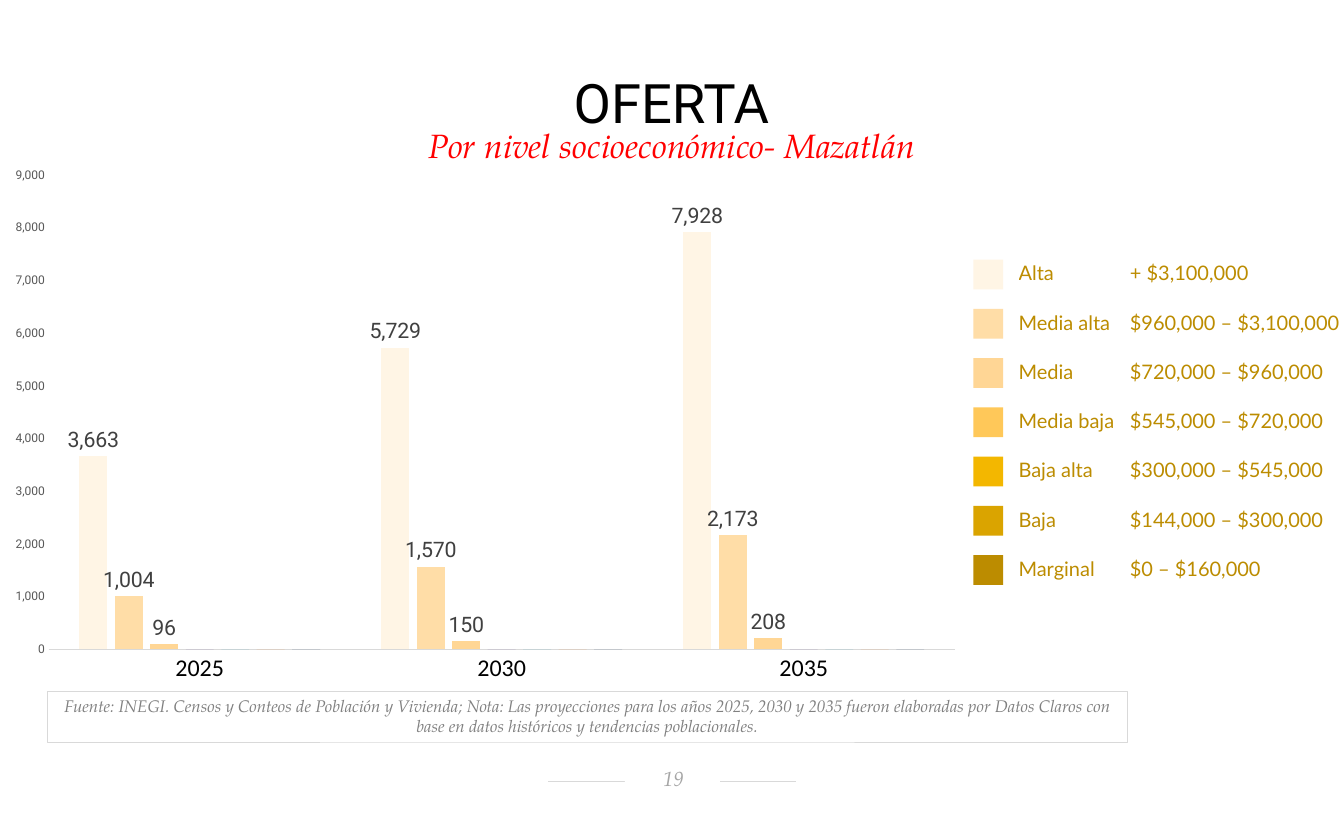
from dataclasses import dataclass

from lxml import etree
from pptx import Presentation
from pptx.chart.data import CategoryChartData
from pptx.dml.color import RGBColor
from pptx.enum.chart import XL_CHART_TYPE, XL_LABEL_POSITION, XL_TICK_MARK
from pptx.enum.shapes import MSO_CONNECTOR, MSO_SHAPE
from pptx.enum.text import MSO_ANCHOR, PP_ALIGN
from pptx.oxml import parse_xml
from pptx.oxml.ns import nsdecls, qn
from pptx.util import Inches, Pt

COLUMNS = XL_CHART_TYPE.COLUMN_CLUSTERED
LABEL_ABOVE = XL_LABEL_POSITION.OUTSIDE_END
NO_TICK = XL_TICK_MARK.NONE
STRAIGHT = MSO_CONNECTOR.STRAIGHT
RECTANGLE = MSO_SHAPE.RECTANGLE
MIDDLE, TOP = MSO_ANCHOR.MIDDLE, MSO_ANCHOR.TOP
CENTER, LEFT = PP_ALIGN.CENTER, PP_ALIGN.LEFT

CELL = Inches(0.5)
SERIF, SANS, LABEL, AXIS = "TeX Gyre Pagella", "Roboto", "Lato", "Calibri"
COLORS = {
    "white": "FFFFFF", "black": "000000", "accent": "FF0000", "rule": "D9D9D9",
    "number": "A6A6A6", "source": "808080", "legend": "BC8C00",
    "scale": "595959", "value": "404040",
}
LEVELS = [
    ("Alta", "+ $3,100,000", "FFF5E5"),
    ("Media alta", "$960,000 – $3,100,000", "FFDDA7"),
    ("Media", "$720,000 – $960,000", "FFD695"),
    ("Media baja", "$545,000 – $720,000", "FFC859"),
    ("Baja alta", "$300,000 – $545,000", "F3B700"),
    ("Baja", "$144,000 – $300,000", "DAA400"),
    ("Marginal", "$0 – $160,000", "BC8C00"),
]
YEARS = ["2025", "2030", "2035"]
SUPPLY = [
    ((3663, 5729, 7928), "FFF5E5"),
    ((1004, 1570, 2173), "FFDDA7"),
    ((96, 150, 208), "FFD695"),
    ((0, 0, 0), "8064A2"),
    ((0, 0, 0), "4BACC6"),
    ((0, 0, 0), "F79646"),
    ((0, 0, 0), "2C4D75"),
]
SOURCE = (
    "Fuente: INEGI. Censos y Conteos de Población y Vivienda; Nota: Las "
    "proyecciones para los años 2025, 2030 y 2035 fueron elaboradas por Datos "
    "Claros con base en datos históricos y tendencias poblacionales."
)


@dataclass
class Box:
    """A region measured in grid columns and rows."""
    column: float
    row: float
    columns: float
    rows: float

    def frame(self):
        """Return left, top, width and height as lengths."""
        cells = (self.column, self.row, self.columns, self.rows)
        return [round(cell * CELL) for cell in cells]

    def inner(self, column, row, columns, rows):
        """Return a box offset from this one's corner."""
        return Box(self.column + column, self.row + row, columns, rows)


def color(key):
    """Turn a colour name or hex string into a colour."""
    return RGBColor.from_string(COLORS.get(key, key))


def style_font(font, size, face, shade, italic=False):
    """Set the size, face, colour and slant of a font."""
    font.size, font.name, font.italic = Pt(size), face, italic
    font.color.rgb = color(shade)


def write(frame, text, size, face, shade, italic=False, align=CENTER, anchor=TOP):
    """Put one formatted paragraph in a text frame."""
    frame.text = text
    frame.word_wrap = True
    frame.vertical_anchor = anchor
    para = frame.paragraphs[0]
    para.alignment = align
    style_font(para.runs[0].font, size, face, shade, italic)
    return para


def add_rectangle(page, box, fill=None, line=None):
    """Add a flat rectangle with an optional fill and outline."""
    shape = page.shapes.add_shape(RECTANGLE, *box.frame())
    shape.shadow.inherit = False
    if fill:
        shape.fill.solid()
        shape.fill.fore_color.rgb = color(fill)
    else:
        shape.fill.background()
    if line:
        shape.line.color.rgb = color(line)
        shape.line.width = Pt(0.75)
    else:
        shape.line.fill.background()
    return shape


def add_footer(page, box):
    """Draw the page number over a thin rule."""
    left, top, width, height = box.frame()
    middle = top + round(height * 0.55)
    rule = page.shapes.add_connector(STRAIGHT, left, middle, left + width, middle)
    rule.line.color.rgb = color("rule")
    rule.line.width = Pt(0.75)
    etree.SubElement(rule.element.spPr, qn("a:effectLst"))
    plate = add_rectangle(page, box.inner(1.6, 0, 1.98, box.rows), "white")
    frame = plate.text_frame
    frame.margin_left, frame.margin_right = Inches(0.11), Inches(0.09)
    frame.margin_top, frame.margin_bottom = Inches(0.02), Inches(0.05)
    write(frame, "19", 15.4, SERIF, "number", True, anchor=MIDDLE)


def add_source(page, box):
    """Write the source note in an outlined box."""
    note = add_rectangle(page, box, line="rule")
    write(note.text_frame, SOURCE, 12.6, SERIF, "source", True)


def add_heading(page, box):
    """Write the title and the subtitle beneath it."""
    title = page.shapes.add_textbox(*box.inner(1.68, 0, 26.02, 1.2).frame())
    frame = title.text_frame
    frame.margin_left = frame.margin_right = Inches(0.12)
    frame.margin_top = frame.margin_bottom = Inches(0.06)
    write(frame, "OFERTA", 40.8, SANS, "black").line_spacing = 0.7
    subtitle = page.shapes.add_textbox(*box.inner(0, 0.8, box.columns, 1.06).frame())
    write(subtitle.text_frame, "Por nivel socioeconómico- Mazatlán",
          25.2, SERIF, "accent", True)


def add_legend(page, box):
    """List each level and price range beside its colour swatch."""
    pitch = box.rows / len(LEVELS)
    area = box.inner(0.94, 0, 6.84, box.rows)
    table = page.shapes.add_table(len(LEVELS), 2, *area.frame()).table
    table.first_row = table.horz_banding = False
    table.columns[0].width = round(2.32 * CELL)
    table.columns[1].width = round(4.52 * CELL)
    for index, (level, prices, shade) in enumerate(LEVELS):
        for cell, text in zip(table.rows[index].cells, (level, prices)):
            cell.fill.background()
            cell.margin_left = cell.margin_right = 0
            cell.margin_top = cell.margin_bottom = 0
            write(cell.text_frame, text, 15, LABEL, "legend", align=LEFT)
            cell.vertical_anchor = MIDDLE
        swatch = box.inner(0, 0.23 + index * pitch, 0.62, 0.62)
        add_rectangle(page, swatch, shade)


def fix_plot(chart):
    """Fix the inner plot area and make the chart background clear."""
    space = chart.element
    plot_area = space.chart.plotArea
    for layout in plot_area.findall(qn("c:layout")):
        plot_area.remove(layout)
    shares = {"x": 0.05, "y": 0.03, "w": 0.93, "h": 0.89}
    sizes = "".join(f'<c:{key} val="{share}"/>' for key, share in shares.items())
    plot_area.insert(0, parse_xml(
        f'<c:layout {nsdecls("c")}><c:manualLayout><c:layoutTarget val="inner"/>'
        f'<c:xMode val="edge"/><c:yMode val="edge"/>{sizes}'
        '</c:manualLayout></c:layout>'))
    space.chart.addnext(parse_xml(
        f'<c:spPr {nsdecls("c", "a")}><a:noFill/><a:ln><a:noFill/></a:ln></c:spPr>'))


def add_supply_chart(page, box):
    """Chart the supply of each level by year."""
    data = CategoryChartData(number_format="#,##0")
    data.categories = YEARS
    for number, (values, _) in enumerate(SUPPLY, 1):
        data.add_series(f"Series {number}", values)
    chart = page.shapes.add_chart(COLUMNS, *box.frame(), data).chart
    chart.has_legend = chart.has_title = False
    style_font(chart.font, 10, AXIS, "black")
    plot = chart.plots[0]
    plot.gap_width, plot.overlap, plot.vary_by_categories = 219, -27, False
    for series, (values, shade) in zip(plot.series, SUPPLY):
        series.format.fill.solid()
        series.format.fill.fore_color.rgb = color(shade)
        if any(values):
            labels = series.data_labels
            labels.show_value = True
            labels.number_format, labels.number_format_is_linked = "#,##0", False
            labels.position = LABEL_ABOVE
            style_font(labels.font, 16, SANS, "value")
    years, scale = chart.category_axis, chart.value_axis
    for axis in (years, scale):
        axis.has_major_gridlines = False
        axis.major_tick_mark = axis.minor_tick_mark = NO_TICK
    style_font(years.tick_labels.font, 18, AXIS, "black")
    years.format.line.color.rgb = color("rule")
    years.format.line.width = Pt(0.75)
    style_font(scale.tick_labels.font, 9, SANS, "scale")
    scale.format.line.fill.background()
    scale.minimum_scale, scale.maximum_scale, scale.major_unit = 0, 9000, 1000
    fix_plot(chart)


def main():
    """Build the supply slide and save the deck."""
    deck = Presentation()
    deck.slide_width, deck.slide_height = 28 * CELL, 17 * CELL
    page = deck.slides.add_slide(deck.slide_layouts[6])
    add_footer(page, Box(11.42, 15.96, 5.16, 0.58))
    add_source(page, Box(0.98, 14.4, 22.5, 1.06))
    add_heading(page, Box(-0.7, 1.7, 29.4, 1.86))
    add_legend(page, Box(20.28, 5.18, 7.78, 7.18))
    add_supply_chart(page, Box(0, 3.32, 20.3, 11.1))
    deck.save("out.pptx")


if __name__ == "__main__":
    main()
